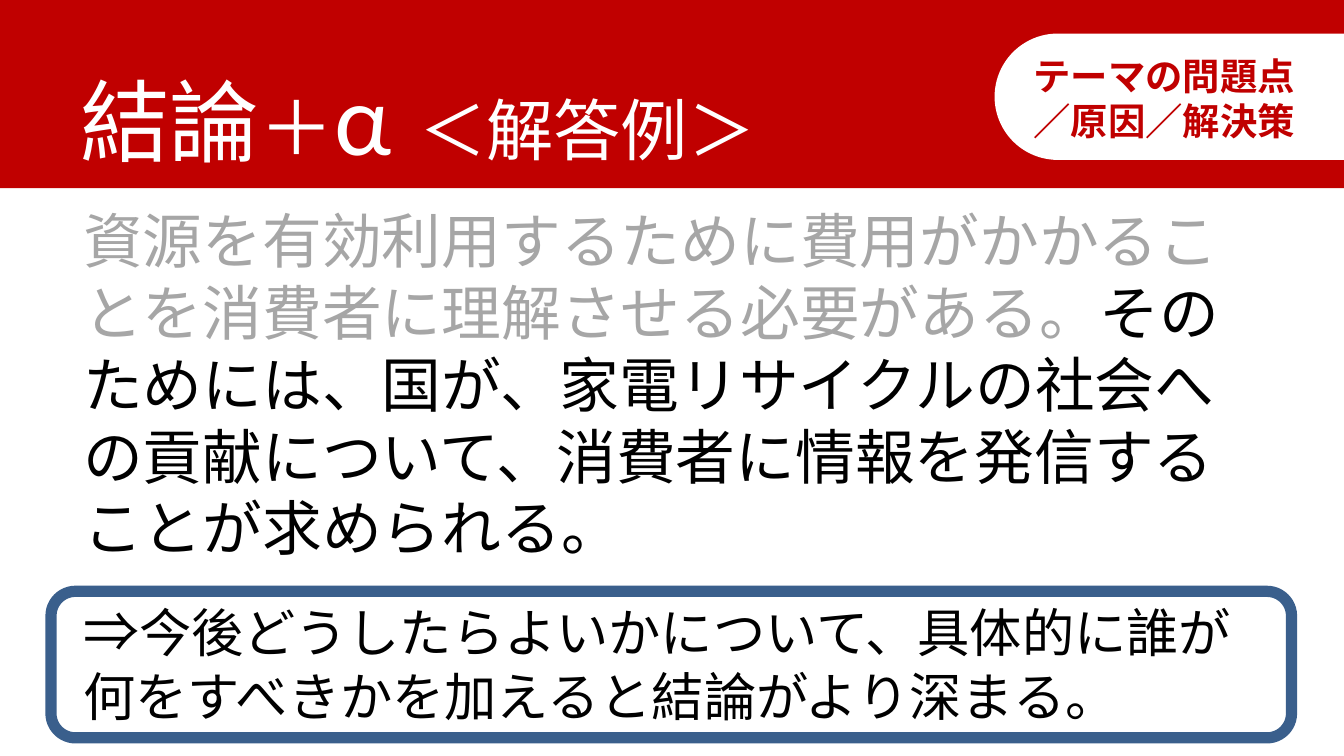
"""Build the slide on adding a concrete proposal to a conclusion."""
from dataclasses import dataclass

from pptx import Presentation
from pptx.dml.color import RGBColor
from pptx.enum.shapes import MSO_SHAPE
from pptx.slide import Slide
from pptx.util import Emu, Pt

EMU_PER_PX = 4572


@dataclass(frozen=True)
class Theme:
    font: str = "Calibri"
    red: str = "C00000"
    white: str = "FFFFFF"
    black: str = "000000"
    gray: str = "A6A6A6"
    blue: str = "3A5F8C"
    heading: int = 48
    plus: int = 40
    alpha: int = 54
    gap: int = 66
    example: int = 36
    answer: int = 32
    arrow: int = 30
    advice: int = 28
    topic: int = 20
    frame_width: int = 6


@dataclass(frozen=True)
class Box:
    left: int
    top: int
    width: int
    height: int

    def emu(self) -> tuple[Emu, ...]:
        return tuple(px(n) for n in (self.left, self.top, self.width, self.height))


@dataclass(frozen=True)
class Panel:
    box: Box
    kind: MSO_SHAPE
    fill: str
    line: str | None = None
    rounding: float | None = None


@dataclass(frozen=True)
class Span:
    text: str
    size: int
    color: str
    bold: bool = False


@dataclass(frozen=True)
class Passage:
    box: Box
    paragraphs: tuple[tuple[Span, ...], ...]
    wrap: bool = True


THEME = Theme()

BANNER = Panel(Box(0, 0, 2000, 280), MSO_SHAPE.RECTANGLE, THEME.red)
ADVICE_FRAME = Panel(Box(76, 880, 1846, 218), MSO_SHAPE.ROUNDED_RECTANGLE,
                     THEME.white, line=THEME.blue)
TOPIC_TAB = Panel(Box(1480, 50, 622, 188), MSO_SHAPE.ROUNDED_RECTANGLE,
                  THEME.white, rounding=0.5)

HEADING = Passage(Box(100, 38, 1800, 204), ((
    Span("結論", THEME.heading, THEME.white),
    Span("＋", THEME.plus, THEME.white),
    Span("α", THEME.alpha, THEME.white),
    Span(" ", THEME.gap, THEME.white),
    Span("＜解答例＞", THEME.example, THEME.white),
),))
ANSWER = Passage(Box(104, 294, 1800, 538), ((
    Span("資源を有効利用するために費用がかかることを消費者に理解させる必要がある。",
         THEME.answer, THEME.gray),
    Span("そのためには、国が、家電リサイクルの社会への貢献について、"
         "消費者に情報を発信することが求められる。", THEME.answer, THEME.black),
),))
ADVICE = Passage(Box(104, 878, 1800, 156), ((
    Span("⇒", THEME.arrow, THEME.black),
    Span("今後どうしたらよいかについて、具体的に誰が何をすべきかを加えると結論がより深まる。",
         THEME.advice, THEME.black),
),))
TOPIC = Passage(Box(1518, 70, 436, 154), tuple(
    (Span(words, THEME.topic, THEME.red, bold=True),)
    for words in ("テーマの問題点", "／原因／解決策")
), wrap=False)


def px(length: int) -> Emu:
    return Emu(length * EMU_PER_PX)


def draw_panel(slide: Slide, panel: Panel) -> None:
    shape = slide.shapes.add_shape(panel.kind, *panel.box.emu())
    shape.shadow.inherit = False
    shape.fill.solid()
    shape.fill.fore_color.rgb = RGBColor.from_string(panel.fill)
    if panel.rounding is not None:
        shape.adjustments[0] = panel.rounding
    if panel.line is None:
        shape.line.fill.background()
    else:
        shape.line.color.rgb = RGBColor.from_string(panel.line)
        shape.line.width = Pt(THEME.frame_width)


def write_passage(slide: Slide, passage: Passage) -> None:
    frame = slide.shapes.add_textbox(*passage.box.emu()).text_frame
    frame.word_wrap = passage.wrap
    for index, spans in enumerate(passage.paragraphs):
        paragraph = frame.add_paragraph() if index else frame.paragraphs[0]
        for span in spans:
            run = paragraph.add_run()
            run.text = span.text
            run.font.name = THEME.font
            run.font.size = Pt(span.size)
            run.font.bold = span.bold
            run.font.color.rgb = RGBColor.from_string(span.color)


def main() -> None:
    presentation = Presentation()
    presentation.slide_width, presentation.slide_height = px(2000), px(1125)
    slide = presentation.slides.add_slide(presentation.slide_layouts[6])
    for panel in (BANNER, ADVICE_FRAME, TOPIC_TAB):
        draw_panel(slide, panel)
    for passage in (HEADING, ANSWER, ADVICE, TOPIC):
        write_passage(slide, passage)
    presentation.save("out.pptx")


if __name__ == "__main__":
    main()
